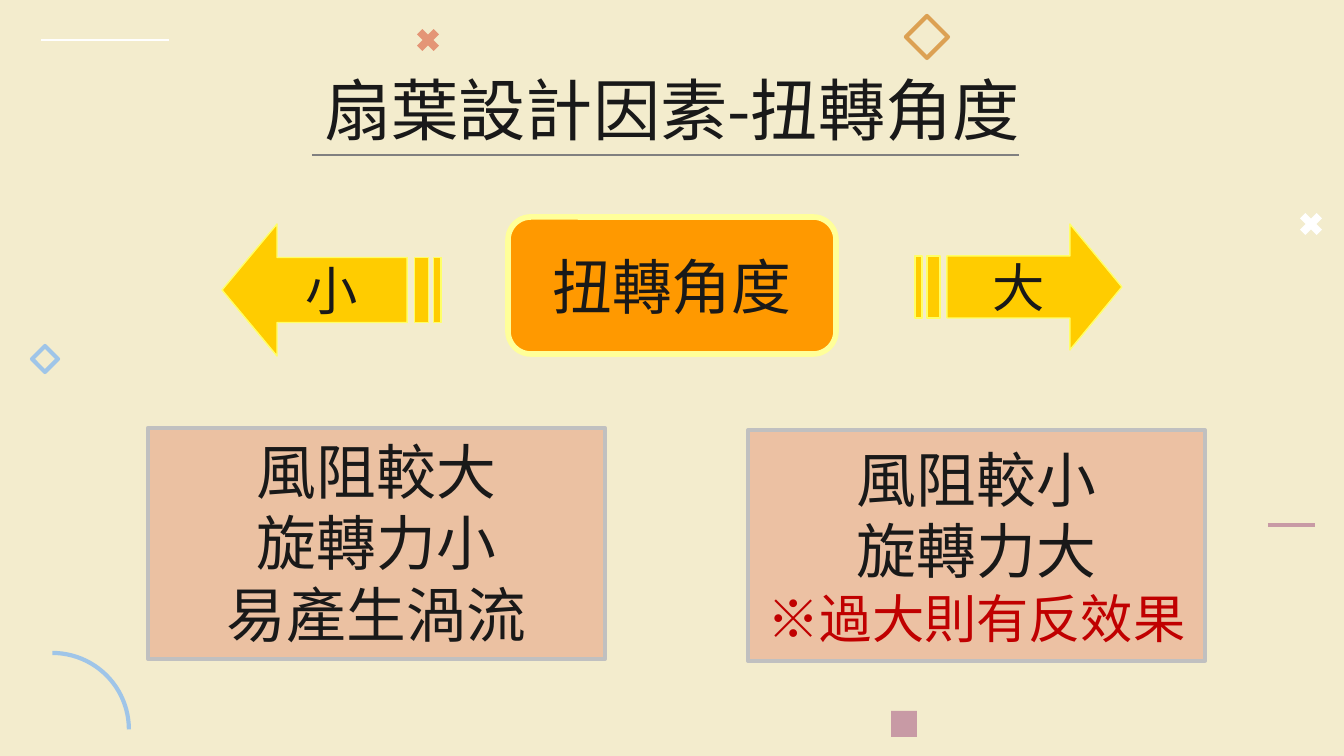
from lxml import etree
from pptx import Presentation
from pptx import util as u
from pptx.dml.color import RGBColor
from pptx.enum import shapes, text
from pptx.oxml.ns import qn

EMU_PER_PX = 914400 / 134.4
FONT = "Noto Sans CJK JP"
COLORS = {
    "background": "F3ECCD", "ink": "191919", "warning": "C00000",
    "mauve": "C89AA5", "sky": "9FC5E8", "ochre": "DCA153",
    "white": "FFFFFF", "coral": "E49576", "peach": "ECC1A3",
    "silver": "C0C0C0", "gray": "808080", "orange": "FF9900",
    "pale": "FFFF99", "gold": "FFCC00", "lemon": "FFFF66",
}
ARROW_LENGTH, ARROW_HEIGHT = 207, 126
ARROW_PARTS = [
    [(155, 0), (155, 32), (32, 32), (32, 94), (155, 94), (155, 126), (207, 63)],
    [(12, 32), (12, 94), (25, 94), (25, 32)],
    [(0, 32), (0, 94), (7, 94), (7, 32)],
]


def px(length):
    """Turn pixels into EMU."""
    return u.Emu(round(length * EMU_PER_PX))


def rgb(name):
    """Look up a named colour."""
    return RGBColor.from_string(COLORS[name])


def style(shape, fill=None, line=None, width=1, alpha=None):
    """Set fill, outline and no shadow."""
    shape.shadow.inherit = False
    if fill:
        shape.fill.solid()
        shape.fill.fore_color.rgb = rgb(fill)
        if alpha:
            color = shape.fill._xPr.find(qn("a:solidFill"))[0]
            etree.SubElement(color, qn("a:alpha"), val=str(alpha * 1000))
    else:
        shape.fill.background()
    if line:
        shape.line.color.rgb = rgb(line)
        shape.line.width = u.Pt(width)
    else:
        shape.line.fill.background()


def write(shape, lines, anchor=text.MSO_ANCHOR.MIDDLE, wrap=True):
    """Write centred lines given as (words, size, colour)."""
    frame = shape.text_frame
    frame.word_wrap = wrap
    frame.vertical_anchor = anchor
    frame.text = "\n".join(words for words, _, _ in lines)
    for paragraph, (_, size, color) in zip(frame.paragraphs, lines):
        paragraph.alignment = text.PP_ALIGN.CENTER
        paragraph.font.size = u.Pt(size)
        paragraph.font.name = FONT
        paragraph.font.color.rgb = rgb(color)
        defaults = paragraph._p.pPr.find(qn("a:defRPr"))
        etree.SubElement(defaults, qn("a:ea"), typeface=FONT)


def add_shape(slide, kind, box, **look):
    """Add a styled preset shape."""
    shape = slide.shapes.add_shape(kind, *map(px, box))
    style(shape, **look)
    return shape


def add_line(slide, left, right, y, color, width):
    """Add a horizontal line."""
    line = slide.shapes.add_connector(
        shapes.MSO_CONNECTOR.STRAIGHT, px(left), px(y), px(right), px(y))
    line.line.color.rgb = rgb(color)
    line.line.width = u.Pt(width)
    etree.SubElement(line._element.spPr, qn("a:effectLst"))


def add_striped_arrow(slide, tail, top, length, height, words):
    """Add a striped arrow; a negative length points left."""
    across, down = length / ARROW_LENGTH, height / ARROW_HEIGHT
    parts = [[(px(tail + x * across), px(top + y * down)) for x, y in part]
             for part in ARROW_PARTS]
    builder = slide.shapes.build_freeform(*parts[0][0])
    for index, part in enumerate(parts):
        if index:
            builder.move_to(*part[0])
        builder.add_line_segments(part[1:], close=True)
    arrow = builder.convert_to_shape()
    style(arrow, "gold", "lemon", 0.75)
    write(arrow, [(words, 28, "ink")], wrap=False)


def add_decorations(slide):
    """Add the small ornaments around the edge."""
    kind = shapes.MSO_SHAPE
    add_line(slide, 1268, 1315, 525, "mauve", 2.25)
    add_line(slide, 41, 169, 40, "white", 0.75)
    add_shape(slide, kind.ARC, (-24, 653, 153, 153), line="sky", width=2.25)
    add_shape(slide, kind.RECTANGLE, (891, 711, 26, 26), fill="mauve")
    for left, top, size, color in ((906, 16, 42, "ochre"), (32, 346, 26, "sky")):
        add_shape(slide, kind.DIAMOND, (left, top, size, size), line=color, width=2.25)
    for left, top, color in ((1295, 208, "white"), (412, 24, "coral")):
        cross = add_shape(slide, kind.MATH_MULTIPLY, (left, top, 32, 32), fill=color)
        cross.adjustments[0] = 0.235


def main():
    """Build the slide on blade twist angle."""
    presentation = Presentation()
    presentation.slide_width, presentation.slide_height = px(1344), px(756)
    slide = presentation.slides.add_slide(presentation.slide_layouts[6])
    slide.background.fill.solid()
    slide.background.fill.fore_color.rgb = rgb("background")
    add_decorations(slide)

    kind = shapes.MSO_SHAPE
    title = slide.shapes.add_textbox(*map(px, (106, 66, 1132, 85)))
    write(title, [("扇葉設計因素-扭轉角度", 36, "ink")])
    add_line(slide, 312, 1019, 155, "gray", 1.5)

    topic = add_shape(slide, kind.ROUNDED_RECTANGLE, (508, 217, 328, 137),
                      fill="orange", line="pale", width=3)
    write(topic, [("扭轉角度", 32, "ink")], wrap=False)
    add_striped_arrow(slide, 441, 224, -219, 132, "小")
    add_striped_arrow(slide, 915, 224, 207, 126, "大")

    small = add_shape(slide, kind.RECTANGLE, (148, 428, 457, 231),
                      fill="coral", line="silver", width=2.25, alpha=49)
    write(small, [(words, 32, "ink") for words in ("風阻較大", "旋轉力小", "易產生渦流")],
          anchor=text.MSO_ANCHOR.TOP)
    large = add_shape(slide, kind.RECTANGLE, (748, 430, 457, 231),
                      fill="peach", line="silver", width=2)
    write(large, [("風阻較小", 32, "ink"), ("旋轉力大", 32, "ink"),
                  ("※過大則有反效果", 28, "warning")])
    presentation.save("out.pptx")


if __name__ == "__main__":
    main()
